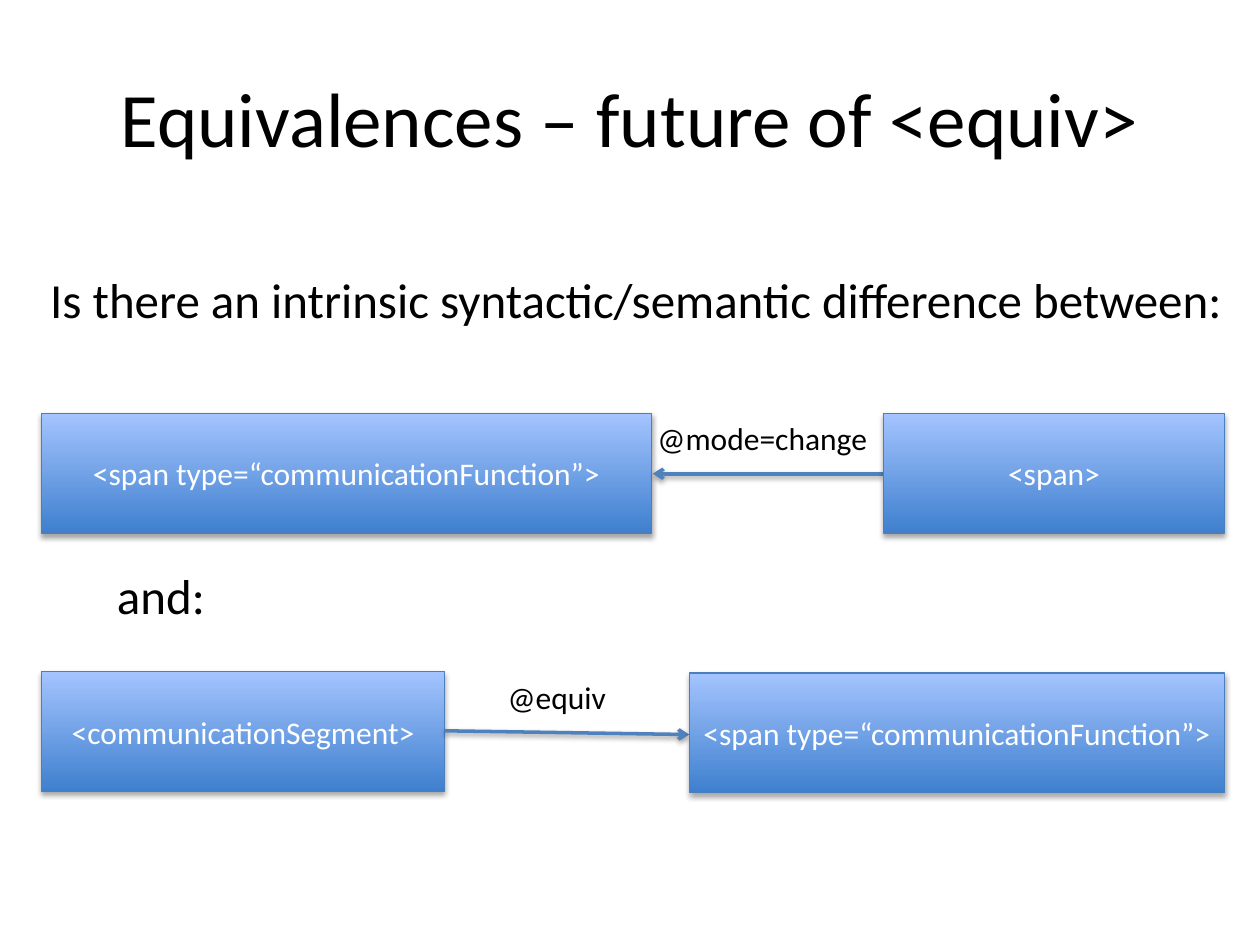
from lxml.etree import SubElement
from pptx import Presentation
from pptx.dml.color import RGBColor
from pptx.enum.shapes import MSO_CONNECTOR, MSO_SHAPE
from pptx.enum.text import MSO_ANCHOR, MSO_AUTO_SIZE, PP_ALIGN
from pptx.oxml.ns import qn
from pptx.util import Inches, Pt

COLORS = {
    "text": "000000",
    "label": "FFFFFF",
    "dark": "3F80CE",
    "light": "A4C4FF",
    "edge": "4B7EBC",
    "arrow": "4F81BD",
    "shadow": "000000",
}


def color(name):
    return RGBColor.from_string(COLORS[name])


class Sketch:
    font = "Calibri"

    def __init__(self, slide):
        self.slide = slide
        self.shapes = slide.shapes

    def group(self):
        """Place the following elements in a new group."""
        self.shapes = self.slide.shapes.add_group_shape().shapes

    def ungroup(self):
        self.shapes = self.slide.shapes

    def label(self, frame, text, size, tint, align):
        frame.text = text
        para = frame.paragraphs[0]
        para.alignment = align
        font = para.runs[0].font
        font.name = self.font
        font.size = Pt(size)
        font.color.rgb = color(tint)

    def text(self, text, left, top, width, height, size, wrap=False,
             align=PP_ALIGN.LEFT, anchor=MSO_ANCHOR.TOP):
        box = self.shapes.add_textbox(
            Inches(left), Inches(top), Inches(width), Inches(height))
        frame = box.text_frame
        self.label(frame, text, size, "text", align)
        frame.word_wrap = wrap
        frame.vertical_anchor = anchor
        if anchor == MSO_ANCHOR.TOP:
            frame.auto_size = MSO_AUTO_SIZE.SHAPE_TO_FIT_TEXT

    def shade(self, props, alpha, gap):
        """Give a soft shadow straight below; gap is in points."""
        effects = props.find(qn("a:effectLst"))
        if effects is None:
            effects = SubElement(props, qn("a:effectLst"))
        outer = SubElement(
            effects, qn("a:outerShdw"), blurRad=str(Pt(3.1)),
            dist=str(Pt(gap)), dir="5400000", rotWithShape="0")
        tint = SubElement(outer, qn("a:srgbClr"), val=COLORS["shadow"])
        SubElement(tint, qn("a:alpha"), val=str(alpha * 1000))

    def box(self, text, left, top, width, height=0.95):
        box = self.shapes.add_shape(
            MSO_SHAPE.RECTANGLE, Inches(left), Inches(top),
            Inches(width), Inches(height))
        box.fill.gradient()
        box.fill.gradient_angle = 90
        for stop, name, place in zip(
                box.fill.gradient_stops, ("dark", "light"), (0, 1)):
            stop.color.rgb = color(name)
            stop.position = place
        box.line.color.rgb = color("edge")
        box.line.width = Pt(0.75)
        box.shadow.inherit = False
        self.shade(box._element.spPr, 35, 1.8)
        frame = box.text_frame
        self.label(frame, text, 18, "label", PP_ALIGN.CENTER)
        frame.word_wrap = True
        frame.vertical_anchor = MSO_ANCHOR.MIDDLE

    def arrow(self, start, end):
        link = self.shapes.add_connector(
            MSO_CONNECTOR.STRAIGHT, *map(Inches, start + end))
        link.line.color.rgb = color("arrow")
        link.line.width = Pt(2)
        props = link._element.spPr
        SubElement(props.find(qn("a:ln")), qn("a:tailEnd"), type="arrow")
        self.shade(props, 38, 1.6)


def main():
    deck = Presentation()
    deck.slide_width, deck.slide_height = Inches(10), Inches(7.5)
    sketch = Sketch(deck.slides.add_slide(deck.slide_layouts[6]))
    left, right = 0.33, 9.72
    typed = "<span type=“communicationFunction”>"

    # Title and question
    sketch.text("Equivalences – future of <equiv>", 0.5, 0.3, 9, 1.25, 44,
                wrap=True, align=PP_ALIGN.CENTER, anchor=MSO_ANCHOR.MIDDLE)
    sketch.text("Is there an intrinsic syntactic/semantic difference between:",
                0.3, 2.09, 9.6, 0.57, 28)

    # Second case: segment with an equivalent span
    sketch.group()
    sketch.box("<communicationSegment>", left, 5.33, 3.2)
    sketch.arrow((3.53, 5.8), (5.47, 5.83))
    sketch.text("@equiv", 3.93, 5.33, 0.99, 0.4, 18)
    sketch.box(typed, right - 4.25, 5.34, 4.25)

    # Link between the cases
    sketch.ungroup()
    sketch.text("and:", 0.83, 4.44, 0.91, 0.57, 28)

    # First case: span that changes a typed span
    sketch.group()
    sketch.box(typed, left, 3.28, 4.84)
    sketch.arrow((7.01, 3.76), (5.18, 3.76))
    sketch.text("@mode=change", 5.12, 3.28, 2.27, 0.4, 18, wrap=True)
    sketch.box("<span>", right - 2.71, 3.28, 2.71)

    deck.save("out.pptx")


if __name__ == "__main__":
    main()
